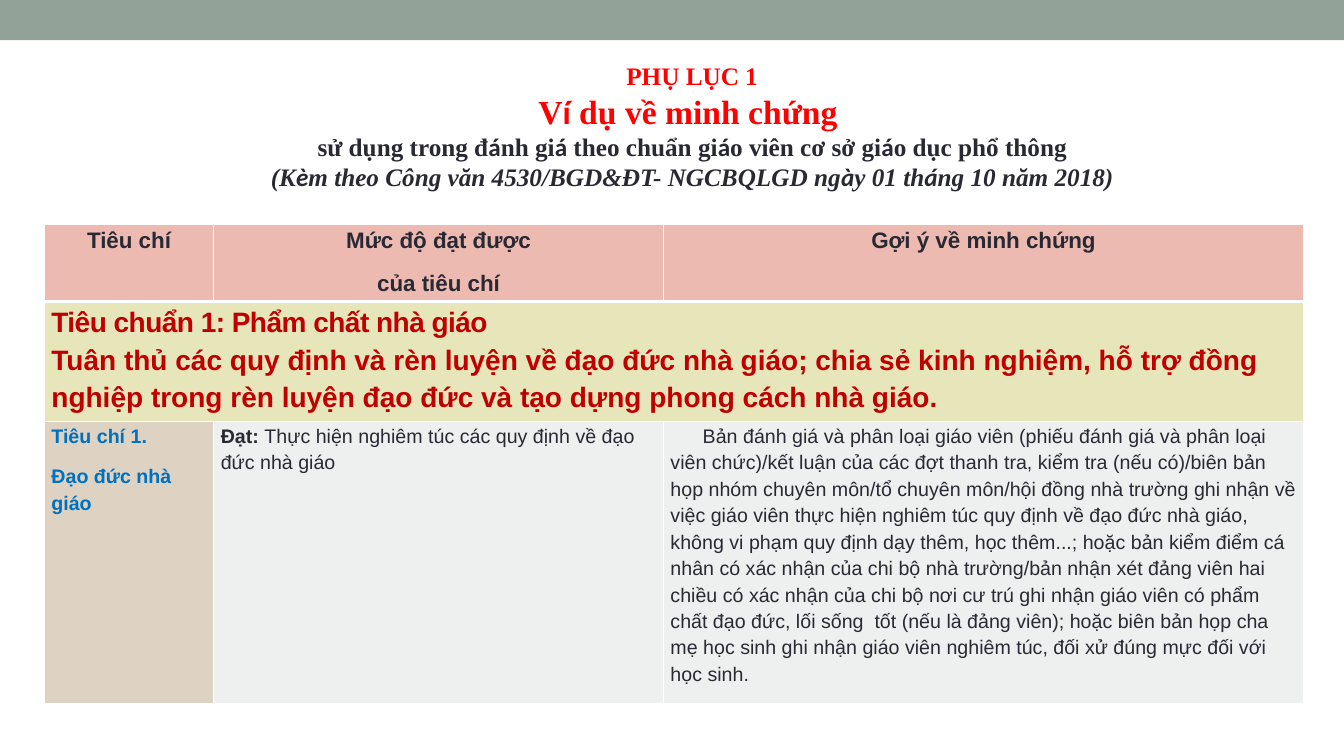
from itertools import groupby

from lxml.etree import SubElement
from pptx import Presentation
from pptx.dml.color import RGBColor
from pptx.enum.shapes import MSO_SHAPE as SHAPE
from pptx.enum.text import MSO_ANCHOR as ANCHOR, MSO_AUTO_SIZE as AUTO_SIZE, PP_ALIGN as ALIGN
from pptx.oxml.ns import qn
from pptx.util import Inches, Pt

DARK, RED, CRIMSON, BLUE, WHITE = "292934", "FF0000", "C00000", "0070C0", "FFFFFF"
BAR, HEADER, STANDARD, CRITERION, BODY = "93A299", "EDBAB1", "E7E5BA", "DED2C2", "EEF0EF"

TITLE_LINES = [  # text, size, colour, italic
    ("PHỤ LỤC 1", 18, RED, False),
    ("Ví dụ về minh chứng ", 24, RED, False),
    ("sử dụng trong đánh giá theo chuẩn giáo viên cơ sở giáo dục phổ thông", 18, DARK, False),
    ("(Kèm theo Công văn 4530/BGD&ĐT- NGCBQLGD ngày 01 tháng 10 năm 2018)", 18, DARK, True),
]
COLUMN_WIDTHS = [1.68, 4.46, 6.35]
ROW_HEIGHTS = [0.76, 1.19, 2.8]
HEADINGS = [["Tiêu chí"], ["Mức độ đạt được", "của tiêu chí"], ["Gợi ý về minh chứng"]]
STANDARD_NAME = "Tiêu chuẩn 1: Phẩm chất nhà giáo"
STANDARD_TEXT = (
    "Tuân thủ các quy định và rèn luyện về đạo đức nhà giáo; chia sẻ kinh nghiệm, "
    "hỗ trợ đồng nghiệp trong rèn luyện đạo đức và tạo dựng phong cách nhà giáo."
)
EVIDENCE = (
    "Bản đánh giá và phân loại giáo viên (phiếu đánh giá và phân loại viên chức)/kết luận "
    "của các đợt thanh tra, kiểm tra (nếu có)/biên bản họp nhóm chuyên môn/tổ chuyên môn/hội "
    "đồng nhà trường ghi nhận về việc giáo viên thực hiện nghiêm túc quy định về đạo đức nhà "
    "giáo, không vi phạm quy định dạy thêm, học thêm...; hoặc bản kiểm điểm cá nhân có xác "
    "nhận của chi bộ nhà trường/bản nhận xét đảng viên hai chiều có xác nhận của chi bộ nơi "
    "cư trú ghi nhận giáo viên có phẩm chất đạo đức, lối sống  tốt (nếu là đảng viên); hoặc "
    "biên bản họp cha mẹ học sinh ghi nhận giáo viên nghiêm túc, đối xử đúng mực đối với học sinh."
)


def color(value):
    return RGBColor.from_string(value)


def add_span(para, text, size, fill, face="Arial", bold=True, italic=False):
    span = para.add_run()
    span.text = text
    font = span.font
    font.size, font.name, font.bold, font.italic = Pt(size), face, bold, italic
    font.color.rgb = color(fill)
    return span


def next_para(frame):
    """Return the first paragraph while it is empty, then new ones."""
    first = frame.paragraphs[0]
    return frame.add_paragraph() if first.runs else first


def set_first_indent(para, inches):
    properties = para._p.get_or_add_pPr()
    properties.set("marL", "0")
    properties.set("indent", str(Inches(inches)))


def add_top_bar(slide, left, top, width, height):
    bar = slide.shapes.add_shape(
        SHAPE.RECTANGLE, Inches(left), Inches(top), Inches(width), Inches(height))
    bar.shadow.inherit = False
    bar.fill.solid()
    bar.fill.fore_color.rgb = color(BAR)
    bar.line.fill.background()


def fill_title(slide, left, top, width, height):
    box = slide.shapes.title
    box.left, box.top, box.width, box.height = map(Inches, (left, top, width, height))
    frame = box.text_frame
    frame.word_wrap = True
    frame.auto_size = AUTO_SIZE.NONE
    frame.vertical_anchor = ANCHOR.TOP
    frame.margin_top = Inches(0.09)
    for text, size, fill, italic in TITLE_LINES:
        para = next_para(frame)
        para.alignment = ALIGN.CENTER
        set_first_indent(para, 0.23)
        for is_accented, letters in groupby(text, lambda letter: letter in "áàèí"):
            face = "Calibri" if is_accented else "Times New Roman"
            add_span(para, "".join(letters), size, fill, face, italic=italic)


def style_cell(cell, fill, top=1, bottom=1):
    """Set margins, white borders (widths in points) and fill."""
    cell.margin_left = cell.margin_right = Inches(0.07)
    cell.margin_top = cell.margin_bottom = 0
    properties = cell._tc.get_or_add_tcPr()
    for side, width in (("L", 1), ("R", 1), ("T", top), ("B", bottom)):
        border = SubElement(properties, qn(f"a:ln{side}"), w=str(Pt(width)))
        solid = SubElement(border, qn("a:solidFill"))
        SubElement(solid, qn("a:srgbClr"), val=WHITE)
    cell.fill.solid()
    cell.fill.fore_color.rgb = color(fill)


def add_cell_para(cell, spacing=1.2, after=10, align=ALIGN.LEFT):
    para = next_para(cell.text_frame)
    para.line_spacing, para.space_after, para.alignment = spacing, Pt(after), align
    return para


def fill_header_row(table):
    for column, lines in enumerate(HEADINGS):
        cell = table.cell(0, column)
        style_cell(cell, HEADER, bottom=3)
        for line in lines:
            add_span(add_cell_para(cell, 1.15, align=ALIGN.CENTER), line, 16, DARK)


def fill_standard_row(table):
    for column in range(len(COLUMN_WIDTHS)):
        style_cell(table.cell(1, column), STANDARD, top=3)
    cell = table.cell(1, 0)
    cell.merge(table.cell(1, 2))
    name = add_span(add_cell_para(cell, after=0), STANDARD_NAME, 20, CRIMSON)
    name.font._element.set("spc", "-40")
    add_span(add_cell_para(cell, after=0), STANDARD_TEXT, 20, CRIMSON)


def fill_criterion_row(table):
    criterion, level, evidence = (table.cell(2, column) for column in range(3))
    for cell, fill in ((criterion, CRITERION), (level, BODY), (evidence, BODY)):
        style_cell(cell, fill)
    for line in ("Tiêu chí 1.", "Đạo đức nhà giáo"):
        add_span(add_cell_para(criterion), line, 14, BLUE)
    para = add_cell_para(level)
    add_span(para, "Đạt: ", 14, DARK)
    add_span(para, "Thực hiện nghiêm túc các quy định về đạo đức nhà giáo", 14, DARK, bold=False)
    para = add_cell_para(evidence, after=0)
    set_first_indent(para, 0.32)
    add_span(para, EVIDENCE, 14, DARK, bold=False)


def add_criteria_table(slide, left, top):
    table = slide.shapes.add_table(
        len(ROW_HEIGHTS), len(COLUMN_WIDTHS), Inches(left), Inches(top),
        Inches(sum(COLUMN_WIDTHS)), Inches(sum(ROW_HEIGHTS))).table
    table.horz_banding = False
    for column, width in zip(table.columns, COLUMN_WIDTHS):
        column.width = Inches(width)
    for row, height in zip(table.rows, ROW_HEIGHTS):
        row.height = Inches(height)
    fill_header_row(table)
    fill_standard_row(table)
    fill_criterion_row(table)


def main():
    deck = Presentation()
    deck.slide_width, deck.slide_height = Inches(13.33), Inches(7.5)
    slide = deck.slides.add_slide(deck.slide_layouts[5])
    add_top_bar(slide, 0, 0, 13.33, 0.4)
    fill_title(slide, 0.85, 0.51, 11.8, 1.72)
    add_criteria_table(slide, 0.44, 2.23)
    deck.save("out.pptx")


if __name__ == "__main__":
    main()
